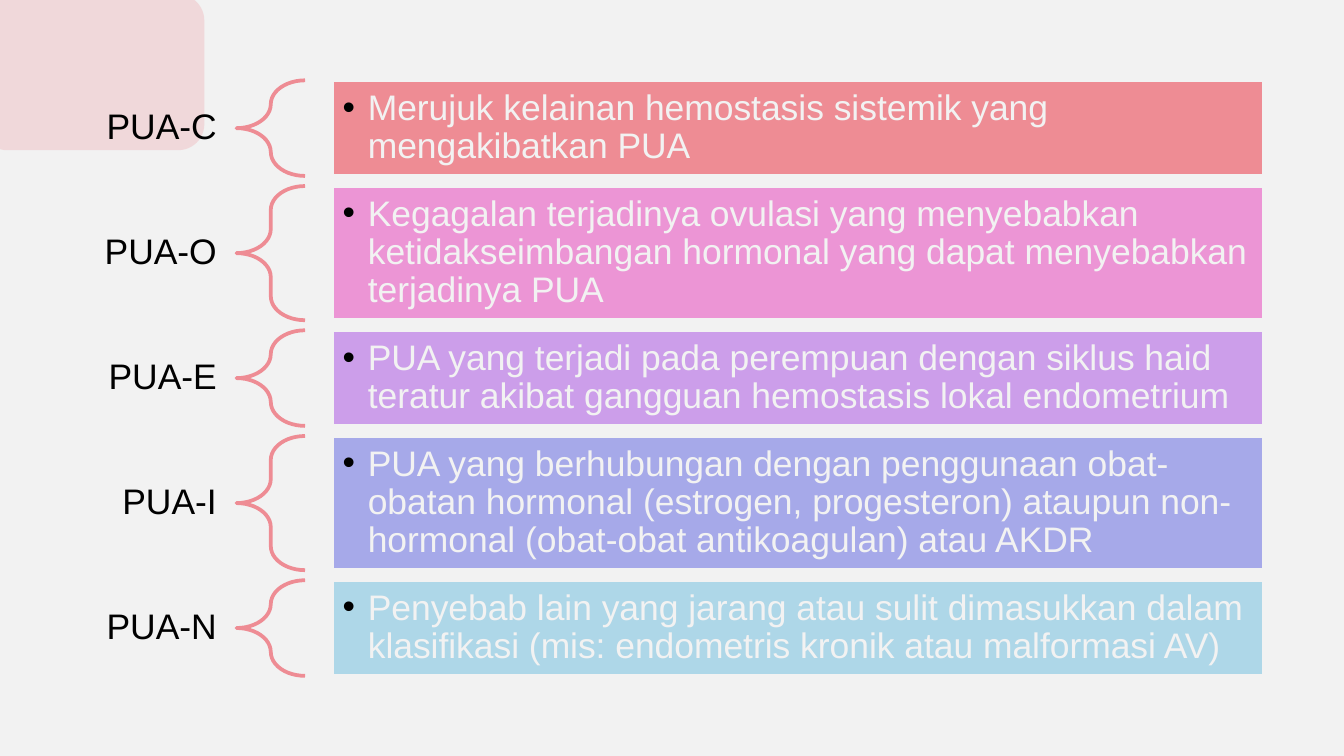
import pptx
import pptx.util
import pptx.dml.color
import pptx.enum.shapes
import pptx.enum.text
import pptx.oxml.ns
from lxml import etree

Pt = pptx.util.Pt
SHAPE = pptx.enum.shapes.MSO_SHAPE
ALIGN = pptx.enum.text.PP_ALIGN

# Content: label, explanation, bar colour, number of text lines
CATEGORIES = [
    ("PUA-C", "Merujuk kelainan hemostasis sistemik yang mengakibatkan PUA", "EE8C94", 2),
    ("PUA-O", "Kegagalan terjadinya ovulasi yang menyebabkan ketidakseimbangan "
              "hormonal yang dapat menyebabkan terjadinya PUA", "EC95D5", 3),
    ("PUA-E", "PUA yang terjadi pada perempuan dengan siklus haid teratur akibat "
              "gangguan hemostasis lokal endometrium", "CC9EEA", 2),
    ("PUA-I", "PUA yang berhubungan dengan penggunaan obat-obatan hormonal (estrogen, "
              "progesteron) ataupun non-hormonal (obat-obat antikoagulan) atau AKDR", "A6A9E9", 3),
    ("PUA-N", "Penyebab lain yang jarang atau sulit dimasukkan dalam klasifikasi "
              "(mis: endometris kronik atau malformasi AV)", "AED7E8", 2),
]

THEME = {"background": "F2F2F2", "accent": "EE8C94", "label": "000000",
         "text": "F2F2F2", "bullet": "000000", "font": "Arial", "size": 19, "line": 2}

# Layout in points
SLIDE_WIDTH, SLIDE_HEIGHT = 720, 405
TOP, GAP = 43.1, 5.4
ROW_HEIGHT = {2: 51.2, 3: 71.9}
LABEL_LEFT, LABEL_WIDTH, LABEL_HEIGHT = -57, 183.7, 29.5
BRACE_LEFT, BRACE_WIDTH = 126.7, 36.7
BAR_LEFT, BAR_WIDTH = 178, 499
BULLET_INDENT = 13.5


def color(value):
    return pptx.dml.color.RGBColor.from_string(value)


def add_shape(slide, kind, box, fill=None, line=None):
    shape = slide.shapes.add_shape(kind, *map(Pt, box))
    shape.shadow.inherit = False
    for target, value in ((shape.fill, fill), (shape.line.fill, line)):
        if value:
            target.solid()
            target.fore_color.rgb = color(value)
        else:
            target.background()
    if line:
        shape.line.width = Pt(THEME["line"])
    return shape


def write(shape, text, text_color, align, inset_x, inset_y):
    frame = shape.text_frame
    settings = {"word_wrap": True, "vertical_anchor": pptx.enum.text.MSO_ANCHOR.MIDDLE,
                "margin_left": Pt(inset_x), "margin_right": Pt(inset_x),
                "margin_top": Pt(inset_y), "margin_bottom": Pt(inset_y)}
    for name, value in settings.items():
        setattr(frame, name, value)
    paragraph = frame.paragraphs[0]
    paragraph.alignment = align
    paragraph.line_spacing = 0.9
    run = paragraph.add_run()
    run.text = text
    for name, value in {"name": THEME["font"], "size": Pt(THEME["size"])}.items():
        setattr(run.font, name, value)
    run.font.color.rgb = color(text_color)
    return paragraph


def add_bullet(paragraph):
    qn = pptx.oxml.ns.qn
    properties = paragraph._p.get_or_add_pPr()
    properties.set("marL", str(Pt(BULLET_INDENT)))
    properties.set("indent", str(-Pt(BULLET_INDENT)))
    bullet_color = etree.SubElement(properties, qn("a:buClr"))
    etree.SubElement(bullet_color, qn("a:srgbClr"), val=THEME["bullet"])
    etree.SubElement(properties, qn("a:buFont"), typeface=THEME["font"])
    etree.SubElement(properties, qn("a:buChar"), char="•")


def add_corner(slide):
    corner = add_shape(slide, SHAPE.ROUNDED_RECTANGLE, (-10, -3, 119.5, 83.5), THEME["accent"])
    fill_color = corner.fill._xPr.find(".//" + pptx.oxml.ns.qn("a:srgbClr"))
    etree.SubElement(fill_color, pptx.oxml.ns.qn("a:alpha"), val="25000")


def add_category(slide, top, height, label, text, bar_color):
    # Label, centred on its row
    label_top = top + (height - LABEL_HEIGHT) / 2
    label_box = slide.shapes.add_textbox(
        *map(Pt, (LABEL_LEFT, label_top, LABEL_WIDTH, LABEL_HEIGHT)))
    write(label_box, label, THEME["label"], ALIGN.RIGHT, 10.6, 3.8)
    # Brace
    brace = add_shape(slide, SHAPE.LEFT_BRACE, (BRACE_LEFT, top, BRACE_WIDTH, height),
                      line=THEME["accent"])
    brace.adjustments[0] = 0.35
    brace.adjustments[1] = 0.5
    # Explanation bar
    bar = add_shape(slide, SHAPE.RECTANGLE, (BAR_LEFT, top, BAR_WIDTH, height),
                    bar_color, THEME["background"])
    add_bullet(write(bar, text, THEME["text"], ALIGN.LEFT, 5.6, 5.6))


def main():
    presentation = pptx.Presentation()
    presentation.slide_width = Pt(SLIDE_WIDTH)
    presentation.slide_height = Pt(SLIDE_HEIGHT)
    slide = presentation.slides.add_slide(presentation.slide_layouts[6])
    slide.background.fill.solid()
    slide.background.fill.fore_color.rgb = color(THEME["background"])

    add_corner(slide)
    top = TOP
    for label, text, bar_color, lines in CATEGORIES:
        height = ROW_HEIGHT[lines]
        add_category(slide, top, height, label, text, bar_color)
        top += height + GAP
    presentation.save("out.pptx")


if __name__ == "__main__":
    main()
